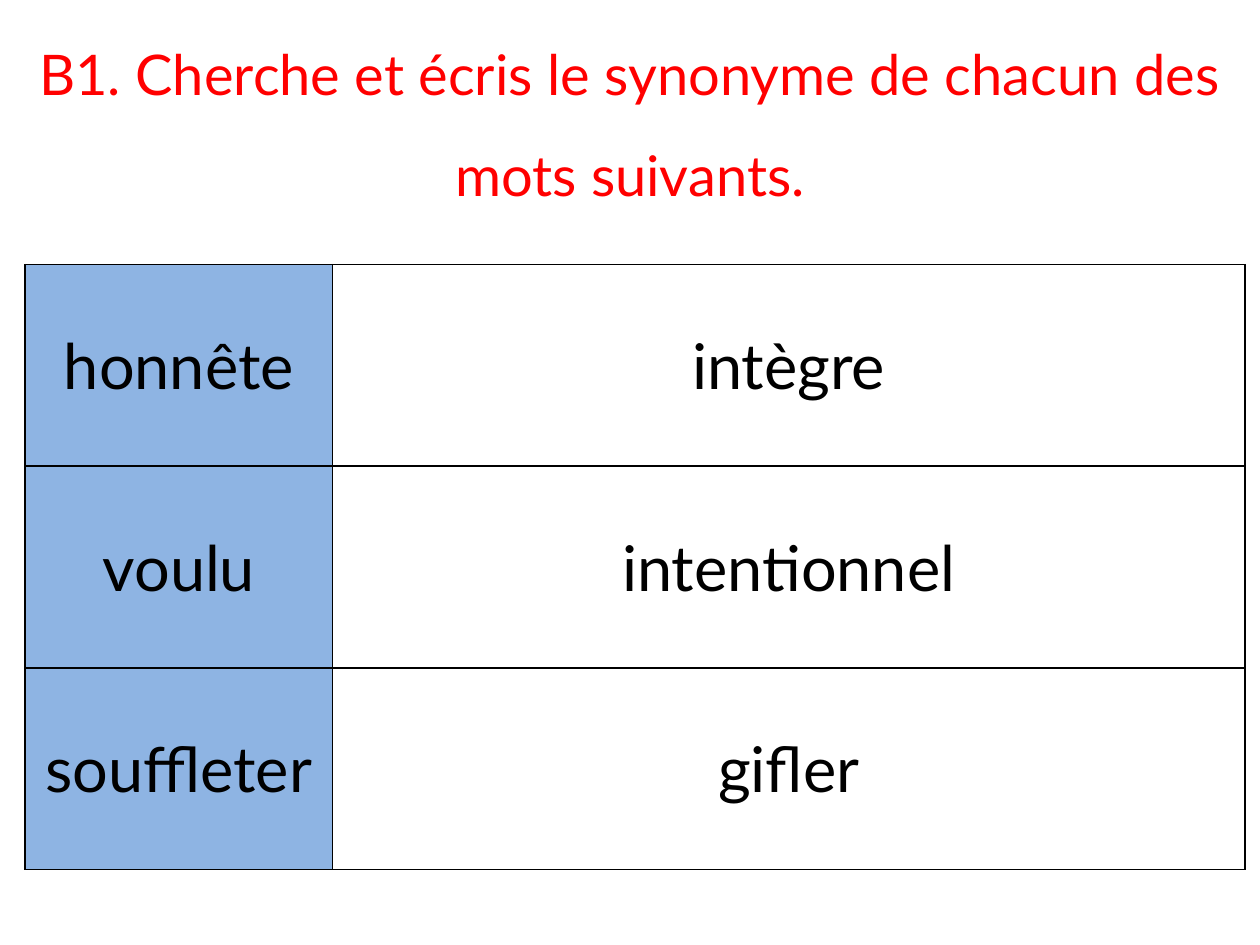
from lxml.etree import SubElement
from pptx import Presentation
from pptx.dml.color import RGBColor
from pptx.enum.text import MSO_ANCHOR as Anchor, MSO_AUTO_SIZE as Auto, PP_ALIGN as Align
from pptx.oxml.ns import qn
from pptx.util import Inches, Pt

FONT = "Lato"
BLACK = "000000"
TITLE = "B1. Cherche et écris le synonyme de chacun des mots suivants."
PAIRS = [("honnête", "intègre"), ("voulu", "intentionnel"), ("souffleter", "gifler")]
WIDTHS = (2.44, 7.24)
FILLS = ("8EB4E3", "FFFFFF")
ROW = 1.6


def rgb(code):
    """Turn a hex string into a colour."""
    return RGBColor.from_string(code)


def write(frame, text, size, color):
    """Add one centred run to the first paragraph and return the paragraph."""
    para = frame.paragraphs[0]
    para.alignment = Align.CENTER
    run = para.add_run()
    run.text = text
    run.font.name = FONT
    run.font.size = Pt(size)
    run.font.color.rgb = rgb(color)
    return para


def add_title(slide):
    """Place and fill the title."""
    title = slide.shapes.title
    title.left, title.top = Inches(0), Inches(0)
    title.width, title.height = Inches(10), Inches(1.72)
    frame = title.text_frame
    frame.word_wrap = True
    frame.auto_size = Auto.SHAPE_TO_FIT_TEXT
    frame.vertical_anchor = Anchor.TOP
    write(frame, TITLE, 32, "FF0000").line_spacing = 1.5


def add_edges(cell, color, width):
    """Draw a solid line on the four sides of a cell."""
    props = cell._tc.get_or_add_tcPr()
    for side in "LRTB":
        line = SubElement(props, qn(f"a:ln{side}"), w=str(Pt(width)))
        fill = SubElement(line, qn("a:solidFill"))
        SubElement(fill, qn("a:srgbClr"), val=color)


def fill_cell(cell, text, color):
    """Give a cell its borders, fill and word."""
    add_edges(cell, BLACK, 1)
    cell.fill.solid()
    cell.fill.fore_color.rgb = rgb(color)
    cell.vertical_anchor = Anchor.MIDDLE
    write(cell.text_frame, text, 36, BLACK)


def add_words(slide):
    """Add the table of words and synonyms."""
    table = slide.shapes.add_table(
        len(PAIRS), len(WIDTHS), Inches(0.2), Inches(2.1),
        Inches(sum(WIDTHS)), Inches(ROW * len(PAIRS))).table
    table.first_row = table.horz_banding = False
    for col, width in zip(table.columns, WIDTHS):
        col.width = Inches(width)
    for r, pair in enumerate(PAIRS):
        table.rows[r].height = Inches(ROW)
        for c, word in enumerate(pair):
            fill_cell(table.cell(r, c), word, FILLS[c])


def main():
    """Build and save the slide."""
    deck = Presentation()
    deck.slide_width, deck.slide_height = Inches(10), Inches(7.5)
    slide = deck.slides.add_slide(deck.slide_layouts[5])
    add_title(slide)
    add_words(slide)
    deck.save("out.pptx")


if __name__ == "__main__":
    main()
